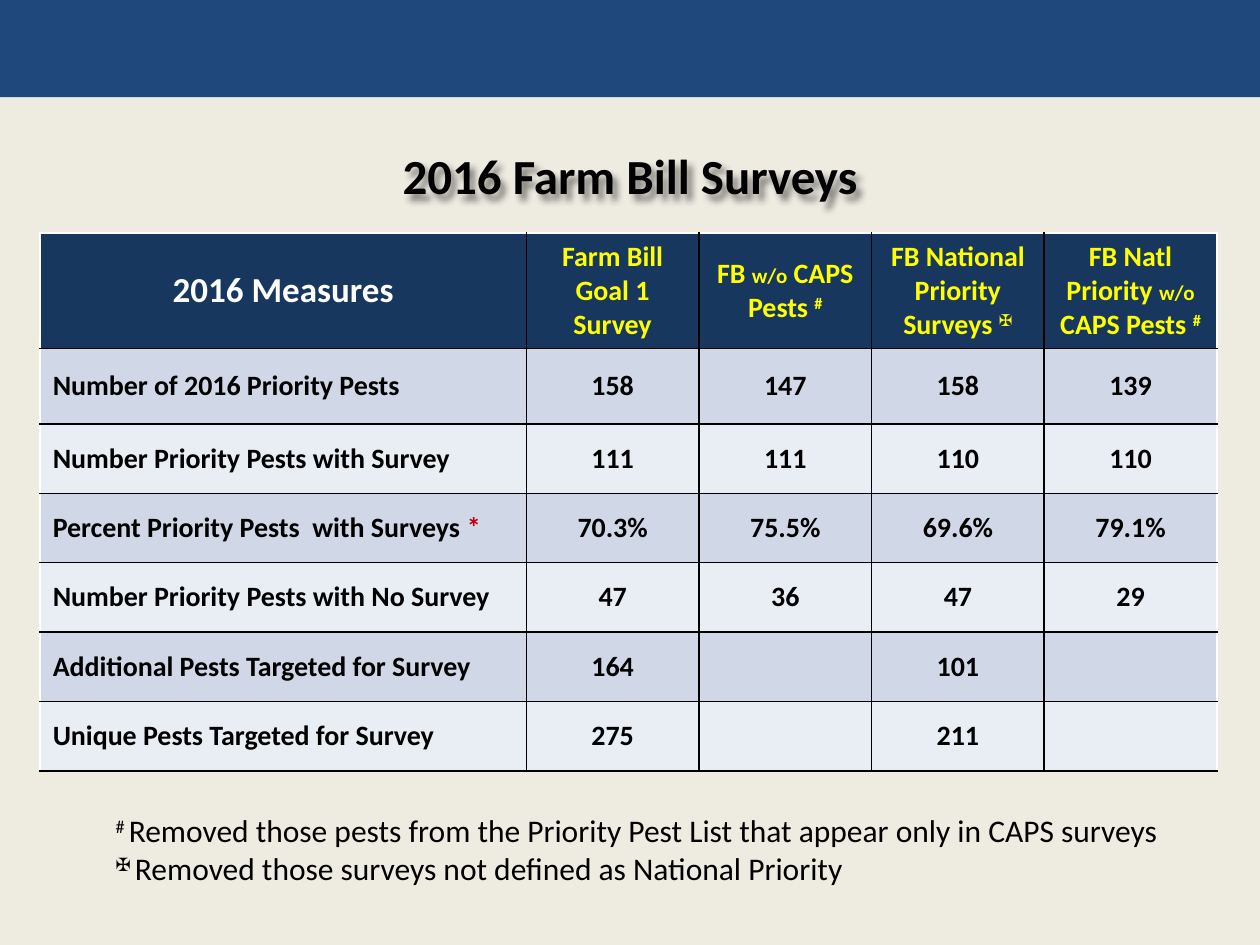
"""Build the 2016 Farm Bill Surveys slide with its table of survey measures."""
from dataclasses import dataclass

from lxml.etree import fromstring
from pptx import Presentation
from pptx.dml.color import RGBColor
from pptx.enum.shapes import MSO_SHAPE
from pptx.enum.text import MSO_ANCHOR, MSO_AUTO_SIZE, PP_ALIGN
from pptx.util import Cm, Pt


@dataclass(frozen=True)
class Theme:
    font: str = "Calibri"
    background: RGBColor = RGBColor(0xEE, 0xEC, 0xE1)
    banner: RGBColor = RGBColor(0x1F, 0x49, 0x7D)
    header: RGBColor = RGBColor(0x17, 0x37, 0x5E)
    odd_row: RGBColor = RGBColor(0xD0, 0xD8, 0xE8)
    even_row: RGBColor = RGBColor(0xE9, 0xED, 0xF4)
    black: RGBColor = RGBColor(0, 0, 0)
    white: RGBColor = RGBColor(0xFF, 0xFF, 0xFF)
    yellow: RGBColor = RGBColor(0xFF, 0xFF, 0)
    red: RGBColor = RGBColor(0xC0, 0, 0)
    title_size: Pt = Pt(28)
    corner_size: Pt = Pt(20)
    note_size: Pt = Pt(18)
    cell_size: Pt = Pt(16)
    small_size: Pt = Pt(12)


THEME = Theme()
NAMESPACE = 'xmlns:a="http://schemas.openxmlformats.org/drawingml/2006/main"'


def write(para, spans, size, color, bold=True):
    para.font.name = THEME.font
    para.font.size = size
    para.font.bold = bold
    para.font.color.rgb = color
    for text, style in spans:
        span = para.add_run()
        span.text = text
        if style == "small":
            span.font.size = THEME.small_size
        elif style == "raised":
            span.font._element.set("baseline", "30000")
        elif style == "red":
            span.font.color.rgb = THEME.red


def add_borders(cell, colors):
    for side, color in zip("LRTB", colors):
        cell._tc.get_or_add_tcPr().append(fromstring(
            f'<a:ln{side} {NAMESPACE} w="12700"><a:solidFill>'
            f'<a:srgbClr val="{color}"/></a:solidFill></a:ln{side}>'))


HEADERS = [
    [("2016 Measures", "")],
    [("Farm Bill Goal 1 Survey", "")],
    [("FB ", ""), ("w/o", "small"), (" CAPS Pests ", ""), ("#", "raised")],
    [("FB National Priority Surveys ", ""), ("✠", "raised")],
    [("FB Natl Priority ", ""), ("w/o", "small"), (" CAPS Pests ", ""), ("#", "raised")],
]
MEASURES = [
    ("Number of 2016 Priority Pests", "158", "147", "158", "139"),
    ("Number Priority Pests with Survey", "111", "111", "110", "110"),
    ("Percent Priority Pests  with Surveys *", "70.3%", "75.5%", "69.6%", "79.1%"),
    ("Number Priority Pests with No Survey", "47", "36", "47", "29"),
    ("Additional Pests Targeted for Survey", "164", "", "101", ""),
    ("Unique Pests Targeted for Survey", "275", "", "211", ""),
]
NOTES = [
    [("# ", "raised"),
     ("Removed those pests from the Priority Pest List that appear only in CAPS surveys", "")],
    [("✠ ", "raised"), ("Removed those surveys not defined as National Priority", "")],
]
COLUMN_WIDTHS = [9.8] + [3.48] * 4
ROW_HEIGHTS = [2.32, 1.52] + [1.4] * 5

deck = Presentation()
deck.slide_width, deck.slide_height = Cm(25.4), Cm(19.05)
page = deck.slides.add_slide(deck.slide_layouts[5])
page.background.fill.solid()
page.background.fill.fore_color.rgb = THEME.background

banner = page.shapes.add_shape(MSO_SHAPE.RECTANGLE, 0, 0, deck.slide_width, Cm(1.96))
banner.shadow.inherit = False
banner.fill.solid()
banner.fill.fore_color.rgb = THEME.banner
banner.line.fill.background()
page.shapes._spTree.insert(2, banner._element)

title = page.shapes.title
title.left, title.top, title.width, title.height = Cm(1.27), Cm(2.54), Cm(22.86), Cm(1.98)
title.text_frame.vertical_anchor = MSO_ANCHOR.MIDDLE
title_para = title.text_frame.paragraphs[0]
title_para.alignment = PP_ALIGN.CENTER
write(title_para, [("2016 Farm Bill Surveys", "")], THEME.title_size, THEME.black)
title._element.spPr.append(fromstring(
    f'<a:effectLst {NAMESPACE}><a:outerShdw blurRad="50800" dist="50800" dir="2700000">'
    '<a:srgbClr val="000000"><a:alpha val="45000"/></a:srgbClr></a:outerShdw></a:effectLst>'))

table = page.shapes.add_table(
    len(ROW_HEIGHTS), len(COLUMN_WIDTHS), Cm(0.81), Cm(4.7),
    Cm(sum(COLUMN_WIDTHS)), Cm(sum(ROW_HEIGHTS))).table
table.horz_banding = False
for column, width in zip(table.columns, COLUMN_WIDTHS):
    column.width = Cm(width)
for row, height in zip(table.rows, ROW_HEIGHTS):
    row.height = Cm(height)

rows = [HEADERS]
for measure in MEASURES:
    label, star, _ = measure[0].partition("*")
    label_spans = [(label, "")] + ([(star, "red")] if star else [])
    rows.append([label_spans] + [[(value, "")] if value else [] for value in measure[1:]])

last_column = len(COLUMN_WIDTHS) - 1
for row_index, row_spans in enumerate(rows):
    for column_index, spans in enumerate(row_spans):
        cell = table.cell(row_index, column_index)
        is_header, is_label = row_index == 0, column_index == 0
        add_borders(cell, [
            THEME.white if is_label else THEME.black,
            THEME.white if column_index == last_column else THEME.black,
            THEME.white if is_header else THEME.black,
            THEME.black])
        cell.fill.solid()
        cell.vertical_anchor = MSO_ANCHOR.MIDDLE
        size, color = THEME.cell_size, THEME.black
        if is_header:
            cell.fill.fore_color.rgb = THEME.header
            color = THEME.white if is_label else THEME.yellow
            size = THEME.corner_size if is_label else THEME.cell_size
        else:
            cell.fill.fore_color.rgb = THEME.odd_row if row_index % 2 else THEME.even_row
            if not is_label:
                cell.margin_left = cell.margin_right = 0
                cell.margin_top = cell.margin_bottom = 0
        para = cell.text_frame.paragraphs[0]
        para.alignment = PP_ALIGN.CENTER if is_header or not is_label else PP_ALIGN.LEFT
        write(para, spans, size, color)

notes_box = page.shapes.add_textbox(Cm(2.08), Cm(16.23), Cm(21.59), Cm(1.8))
notes_box.text_frame.word_wrap = False
notes_box.text_frame.auto_size = MSO_AUTO_SIZE.SHAPE_TO_FIT_TEXT
for index, spans in enumerate(NOTES):
    frame = notes_box.text_frame
    para = frame.add_paragraph() if index else frame.paragraphs[0]
    write(para, spans, THEME.note_size, THEME.black, bold=False)

deck.save("out.pptx")
